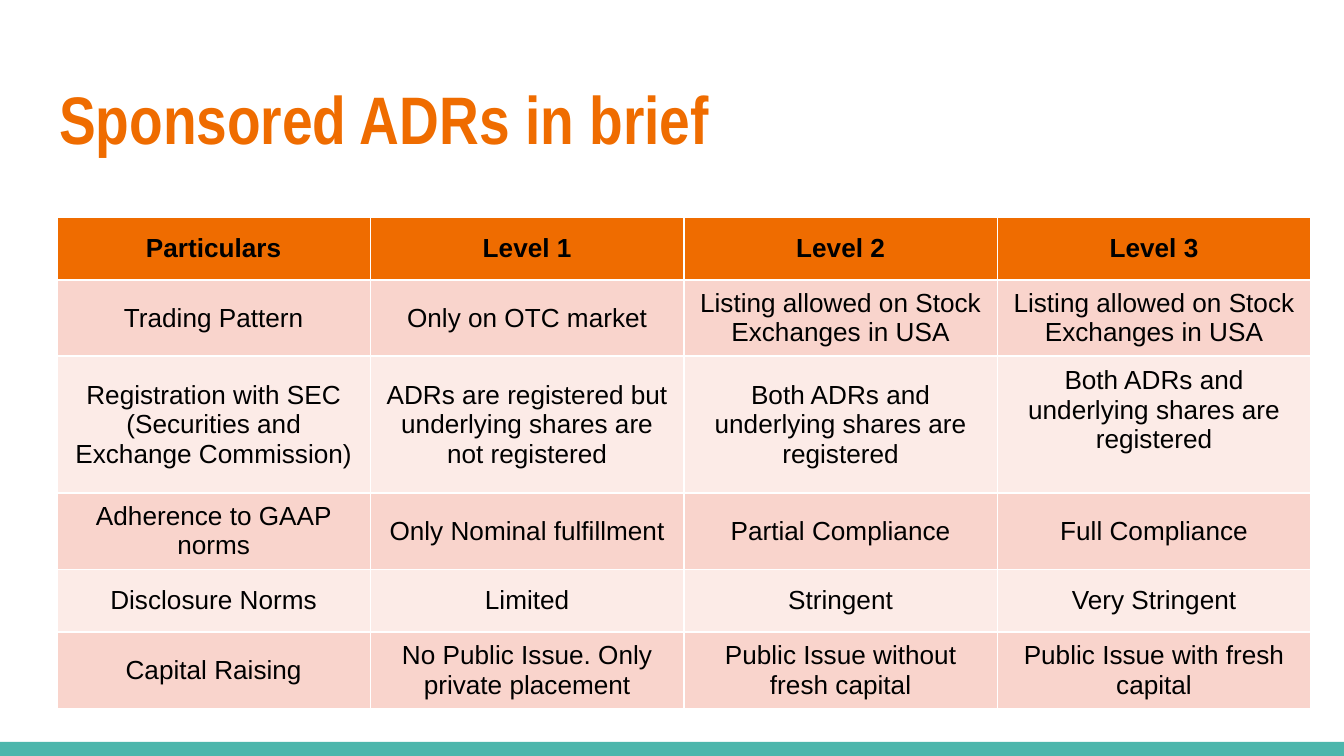
import pptx
import pptx.dml.color
import pptx.enum.shapes
import pptx.enum.text
import pptx.util

ORANGE = pptx.dml.color.RGBColor(0xEF, 0x6C, 0x00)
TEAL = pptx.dml.color.RGBColor(0x4D, 0xB6, 0xAC)
ROSE = pptx.dml.color.RGBColor(0xF9, 0xD4, 0xCC)
BLUSH = pptx.dml.color.RGBColor(0xFC, 0xEB, 0xE7)
BLACK = pptx.dml.color.RGBColor(0x00, 0x00, 0x00)

EMU_PER_PX = 914400 / 134.4
SLIDE_WIDTH = 1344
SLIDE_HEIGHT = 756
BAR_HEIGHT = 14
ROW_HEIGHT = 63

ADR_LEVELS = [
    ["Particulars", "Level 1", "Level 2", "Level 3"],
    ["Trading Pattern", "Only on OTC market",
     "Listing allowed on Stock Exchanges in USA",
     "Listing allowed on Stock Exchanges in USA"],
    ["Registration with SEC (Securities and Exchange Commission)",
     "ADRs are registered but underlying shares are not registered",
     "Both ADRs and underlying shares are registered",
     "Both ADRs and underlying shares are registered"],
    ["Adherence to GAAP norms", "Only Nominal fulfillment",
     "Partial Compliance", "Full Compliance"],
    ["Disclosure Norms", "Limited", "Stringent", "Very Stringent"],
    ["Capital Raising", "No Public Issue. Only private placement",
     "Public Issue without fresh capital", "Public Issue with fresh capital"],
]


def px(length):
    return pptx.util.Emu(round(length * EMU_PER_PX))


class SlideBuilder:
    title_font = "Arial Narrow"
    body_font = "Arial"
    title_size = 36
    body_size = 14

    def __init__(self, slide):
        self.slide = slide

    def set_font(self, para, name, size, color, bold):
        para.font.name = name
        para.font.size = pptx.util.Pt(size)
        para.font.color.rgb = color
        para.font.bold = bold

    def bar(self, left, top, width, height, color):
        shape = self.slide.shapes.add_shape(
            pptx.enum.shapes.MSO_SHAPE.RECTANGLE,
            px(left), px(top), px(width), px(height))
        shape.shadow.inherit = False
        shape.fill.solid()
        shape.fill.fore_color.rgb = color
        shape.line.fill.background()

    def title(self, left, top, width, height, text):
        box = self.slide.shapes.add_textbox(px(left), px(top), px(width), px(height))
        frame = box.text_frame
        frame.word_wrap = True
        frame.vertical_anchor = pptx.enum.text.MSO_ANCHOR.MIDDLE
        frame.margin_left = frame.margin_right = pptx.util.Inches(0.1)
        frame.margin_top = frame.margin_bottom = pptx.util.Inches(0.1)
        para = frame.paragraphs[0]
        para.text = text
        self.set_font(para, self.title_font, self.title_size, ORANGE, True)

    def table(self, left, top, width, height, rows):
        graphic = self.slide.shapes.add_table(
            len(rows), len(rows[0]), px(left), px(top), px(width), px(height))
        table = graphic.table
        for row_index, texts in enumerate(rows):
            table.rows[row_index].height = px(ROW_HEIGHT)
            header = row_index == 0
            fill = ORANGE if header else (BLUSH, ROSE)[row_index % 2]
            for column_index, text in enumerate(texts):
                cell = table.cell(row_index, column_index)
                cell.fill.solid()
                cell.fill.fore_color.rgb = fill
                cell.vertical_anchor = pptx.enum.text.MSO_ANCHOR.MIDDLE
                para = cell.text_frame.paragraphs[0]
                para.text = text
                para.alignment = pptx.enum.text.PP_ALIGN.CENTER
                self.set_font(para, self.body_font, self.body_size, BLACK, header)
        graphic.height = px(height)
        return table


def main():
    deck = pptx.Presentation()
    deck.slide_width = px(SLIDE_WIDTH)
    deck.slide_height = px(SLIDE_HEIGHT)
    builder = SlideBuilder(deck.slides.add_slide(deck.slide_layouts[6]))

    builder.bar(0, SLIDE_HEIGHT - BAR_HEIGHT, SLIDE_WIDTH, BAR_HEIGHT, TEAL)
    builder.title(46, 66, 1253, 103, "Sponsored ADRs in brief")
    levels = builder.table(57, 217, 1254, 493, ADR_LEVELS)
    levels.cell(2, 3).margin_bottom = px(36)

    deck.save("out.pptx")


if __name__ == "__main__":
    main()
